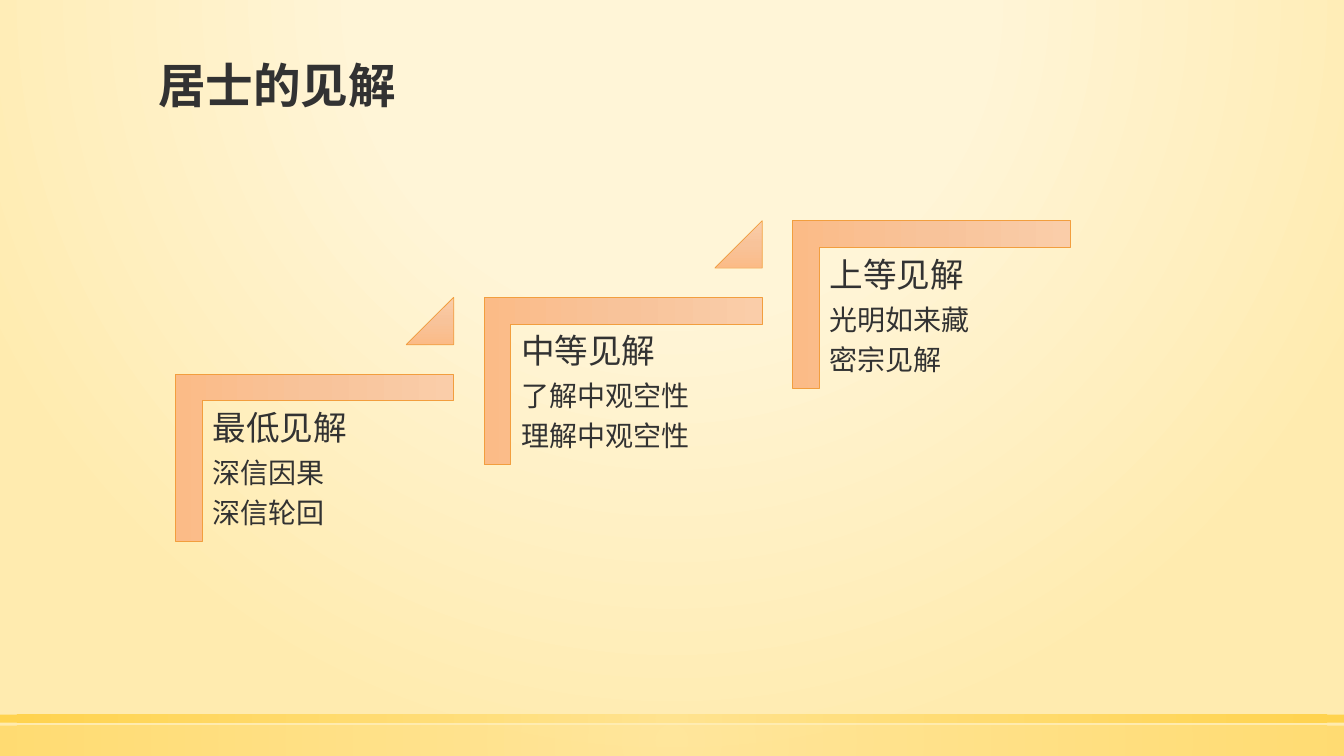
from lxml import etree
from pptx import Presentation
from pptx.dml.color import RGBColor
from pptx.enum.shapes import MSO_SHAPE as SHAPE
from pptx.enum.text import MSO_ANCHOR, MSO_AUTO_SIZE, PP_ALIGN
from pptx.oxml import parse_xml
from pptx.oxml.ns import nsdecls, qn
from pptx.util import Inches, Pt

W, H = 13.33, 7.5
FONT = "Noto Sans CJK SC"
INK, EDGE = "323232", "F29E3E"
PEACH = [(0, "FACDA9"), (50, "F8C39A"), (100, "FBBB87")]
DOWN = '<a:lin ang="5400000" scaled="0"/>'

# Staircase grid: each step moves one column right and one row up
LEFT, TOP, COL, ROW = 1.74, 3.71, 3.06, 0.76
BRACKET_W, BRACKET_H, MARK = 2.76, 1.66, 0.47
STEPS = [
    ("最低见解", "深信因果", "深信轮回"),
    ("中等见解", "了解中观空性", "理解中观空性"),
    ("上等见解", "光明如来藏", "密宗见解"),
]


def rgb(value):
    return RGBColor.from_string(value)


def circle(left, top, right, bottom):
    return (f'<a:path path="circle"><a:fillToRect l="{left}000" t="{top}000" '
            f'r="{right}000" b="{bottom}000"/></a:path>')


def gradient(stops, direction):
    """Stops are (position, colour) or (position, colour, opacity), in percent."""
    marks = ""
    for pos, color, *opacity in stops:
        alpha = "".join(f'<a:alpha val="{o}000"/>' for o in opacity)
        marks += f'<a:gs pos="{pos}000"><a:srgbClr val="{color}">{alpha}</a:srgbClr></a:gs>'
    return parse_xml(f'<a:gradFill {nsdecls("a")} rotWithShape="1">'
                     f'<a:gsLst>{marks}</a:gsLst>{direction}</a:gradFill>')


def set_background(s):
    s.background.fill.solid()
    bg_pr = s.element.find(".//" + qn("p:bgPr"))
    stops = [(0, "FFF5D7", 59), (40, "FFF5D7", 66), (100, "FFEBAF")]
    bg_pr.replace(bg_pr[0], gradient(stops, circle(50, -80, 50, 180)))


def add_figure(s, kind, box, stops, direction, edge=None):
    sp = s.shapes.add_shape(kind, *map(Inches, box))
    sp.shadow.inherit = False
    sp.element.spPr.find(qn("a:prstGeom")).addnext(gradient(stops, direction))
    if edge:
        sp.line.color.rgb = rgb(edge)
        sp.line.width = Pt(0.5)
    else:
        sp.line.fill.background()
    return sp


def add_run(p, text, size, bold=False):
    r = p.add_run()
    r.text = text
    r.font.size, r.font.bold, r.font.name = Pt(size), bold, FONT
    r.font.color.rgb = rgb(INK)
    etree.SubElement(r._r.get_or_add_rPr(), qn("a:ea")).set("typeface", FONT)
    p.line_spacing = 0.9


def add_footer_bar(s, top, height, opacity):
    stops = [(0, "FFE186", opacity), (100, "FFCD36", opacity)]
    add_figure(s, SHAPE.RECTANGLE, (0, top, W, height), stops, circle(50, 50, 50, 50))


def set_title(s, text):
    title = s.shapes.title
    title.left, title.top, title.width, title.height = map(Inches, (1.47, 0.51, 10.4, 0.67))
    tf = title.text_frame
    tf.auto_size = MSO_AUTO_SIZE.NONE
    tf.vertical_anchor = MSO_ANCHOR.BOTTOM
    p = tf.paragraphs[0]
    p.alignment = PP_ALIGN.LEFT
    add_run(p, text, 34, bold=True)


def add_bracket(s, x, y):
    # A quarter turn swaps width and height around the same centre
    shift = (BRACKET_W - BRACKET_H) / 2
    box = (x + shift, y - shift, BRACKET_H, BRACKET_W)
    sp = add_figure(s, SHAPE.CORNER, box, PEACH, DOWN, EDGE)
    sp.rotation = 90
    sp.adjustments[0] = sp.adjustments[1] = 0.16


def add_step_text(s, x, y, lines):
    tf = s.shapes.add_textbox(*map(Inches, (x, y, 2.49, 2.19))).text_frame
    tf.word_wrap = True
    tf.margin_left = tf.margin_right = tf.margin_top = tf.margin_bottom = Inches(0.1)
    for i, line in enumerate(lines):
        p = tf.add_paragraph() if i else tf.paragraphs[0]
        add_run(p, line, 20 if i else 24)
        after = etree.SubElement(p._p.get_or_add_pPr(), qn("a:spcAft"))
        etree.SubElement(after, qn("a:spcPct")).set("val", "35000")


def add_mark(s, x, y):
    sp = add_figure(s, SHAPE.ISOSCELES_TRIANGLE, (x, y, MARK, MARK), PEACH, DOWN, EDGE)
    sp.adjustments[0] = 1


def main():
    prs = Presentation()
    prs.slide_width, prs.slide_height = Inches(W), Inches(H)
    s = prs.slides.add_slide(prs.slide_layouts[5])

    # Background, footer bars and title
    set_background(s)
    add_footer_bar(s, 7.2, 0.3, 50)
    add_footer_bar(s, 7.09, 0.08, 80)
    set_title(s, "居士的见解")

    # Rising steps, with a mark above every step but the last
    for i, lines in enumerate(STEPS):
        x, y = LEFT + i * COL, TOP - i * ROW
        add_bracket(s, x, y)
        add_step_text(s, x + 0.27, y + 0.27, lines)
        if i < len(STEPS) - 1:
            add_mark(s, x + BRACKET_W - MARK, y - ROW)

    prs.save("out.pptx")


if __name__ == "__main__":
    main()
